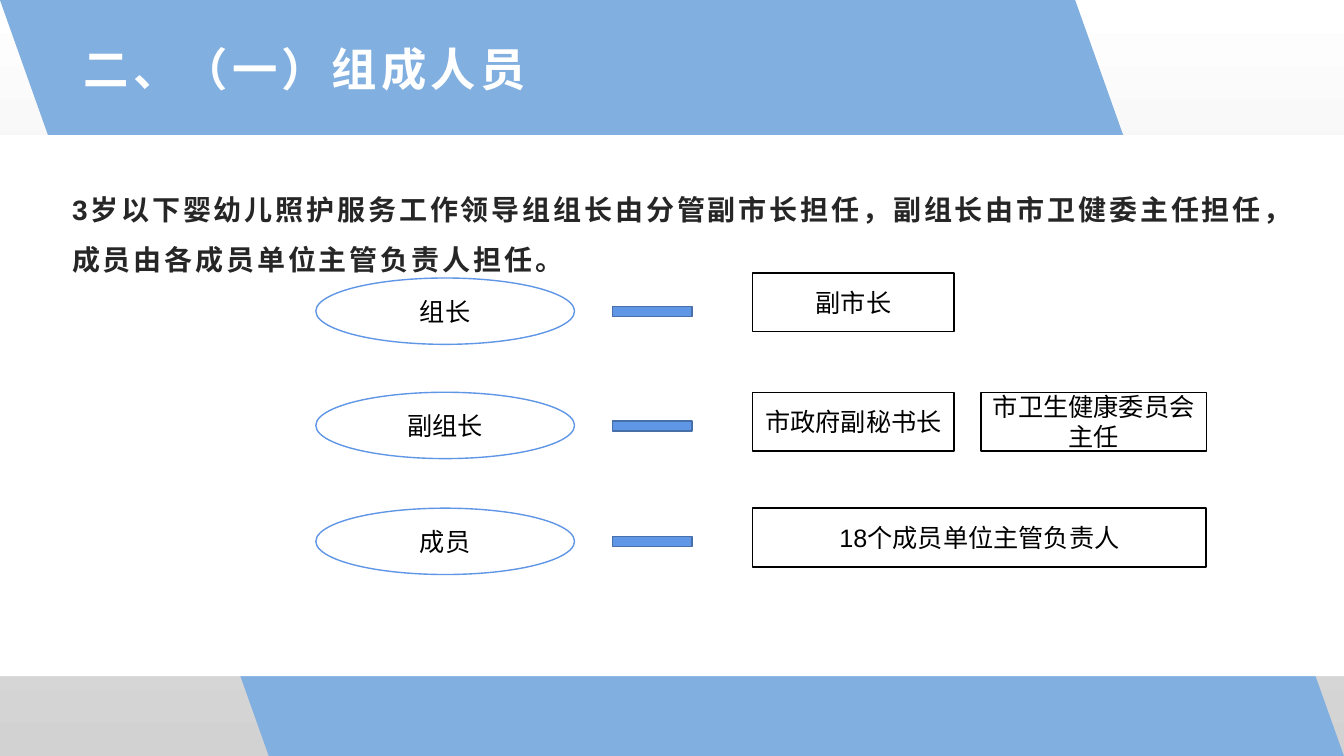
from pptx import Presentation
from pptx.dml.color import RGBColor
from pptx.enum.shapes import MSO_SHAPE as Shape
from pptx.enum.text import MSO_ANCHOR as Anchor, PP_ALIGN as Align
from pptx.util import Inches, Pt


def color(code):
    return RGBColor.from_string(code)


class Board:
    """A slide laid out on a grid of 160 columns by 90 rows."""

    font = "Arial"
    sky, blue, navy = "81AFE0", "6096E6", "476FAA"
    white, gray, ink, black = "FFFFFF", "D2D2D2", "262626", "000000"

    def __init__(self, presentation):
        self.column = presentation.slide_width / 160
        self.row = presentation.slide_height / 90
        self.slide = presentation.slides.add_slide(presentation.slide_layouts[6])

    def place(self, left, top, width, height):
        return (round(left * self.column), round(top * self.row),
                round(width * self.column), round(height * self.row))

    def backdrop(self, upper, lower):
        fill = self.slide.background.fill
        fill.gradient()
        fill.gradient_angle = 270
        for stop, code in zip(fill.gradient_stops, (upper, lower)):
            stop.color.rgb = color(code)

    def label(self, shape, text, size, code, bold=False, spacing=0):
        shape.text_frame.word_wrap = True
        paragraph = shape.text_frame.paragraphs[0]
        run = paragraph.add_run()
        run.text = text
        properties = run._r.get_or_add_rPr()
        properties.set("lang", "zh-CN")
        if spacing:
            properties.set("spc", str(spacing * 100))
        paragraph.font.name = self.font
        paragraph.font.size = Pt(size)
        paragraph.font.bold = bold
        paragraph.font.color.rgb = color(code)
        return paragraph

    def shape(self, kind, area, fill, line=None, text=None):
        shape = self.slide.shapes.add_shape(kind, *self.place(*area))
        shape.shadow.inherit = False
        shape.fill.solid()
        shape.fill.fore_color.rgb = color(fill)
        if line:
            shape.line.color.rgb = color(line)
            shape.line.width = Pt(1)
        else:
            shape.line.fill.background()
        if text:
            shape.text_frame.vertical_anchor = Anchor.MIDDLE
            self.label(shape, text, 18, self.black).alignment = Align.CENTER
        return shape

    def text(self, area, text, size, code, spacing, anchor=Anchor.TOP):
        box = self.slide.shapes.add_textbox(*self.place(*area))
        box.text_frame.vertical_anchor = anchor
        return self.label(box, text, size, code, True, spacing)


def main():
    presentation = Presentation()
    presentation.slide_width = Inches(13.333)
    presentation.slide_height = Inches(7.5)
    board = Board(presentation)

    board.backdrop(board.white, board.gray)
    slant = board.shape(Shape.FLOWCHART_DATA, (0, 0, 160, 90), board.sky)
    slant._element.spPr.xfrm.set("flipH", "1")
    board.shape(Shape.RECTANGLE, (0, 16.1, 160, 64.4), board.white)

    board.text((8.8, 4, 93.1, 8.2), "二、（一）组成人员",
               32.4, board.white, 3, Anchor.MIDDLE)
    body = board.text(
        (7.4, 20.3, 145.1, 56.6),
        "3岁以下婴幼儿照护服务工作领导组组长由分管副市长担任，副组长由市卫健委主任担任，"
        "成员由各成员单位主管负责人担任。", 20, board.ink, 2)
    body.line_spacing = 1.5
    body.space_before = Pt(10)

    first, second = 89.6, 116.8
    roles = [
        ("组长", 33.1, 32.5, [("副市长", first, 24)]),
        ("副组长", 46.7, 46.7, [("市政府副秘书长", first, 24),
                             ("市卫生健康委员会主任", second, 26.8)]),
        ("成员", 60.5, 60.5, [("18个成员单位主管负责人", first, 54)]),
    ]
    for role, top, holder_top, holders in roles:
        board.shape(Shape.OVAL, (37.6, top, 30.8, 7.9),
                    board.white, board.blue, role)
        board.shape(Shape.RECTANGLE, (72.9, top + 3.4, 9.5, 1.2),
                    board.blue, board.navy)
        for holder, left, width in holders:
            board.shape(Shape.RECTANGLE, (left, holder_top, width, 7),
                        board.white, board.black, holder)

    presentation.save("out.pptx")


if __name__ == "__main__":
    main()
